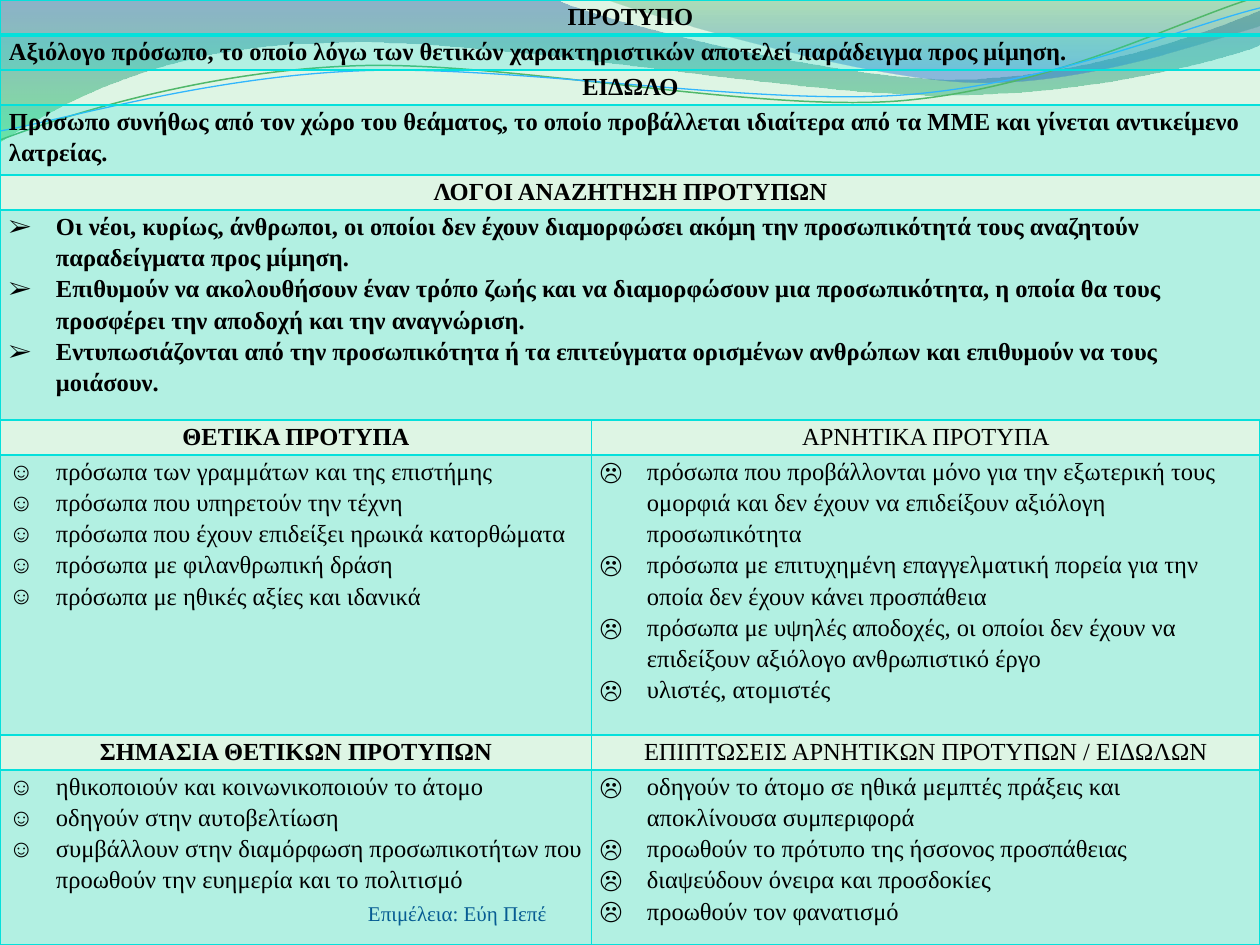
import pptx
import pptx.util
import pptx.dml.color
import pptx.enum.text
import pptx.oxml
import pptx.oxml.ns
from lxml import etree

PX = 914400 / 126
WIDE, HIGH = 1260, 945
FACE, AQUA = "Times New Roman", "05E0DB"
ARROW, SMILE, FROWN = "➢", "☺", "☹"
PLAIN = "{2D5ABB26-0587-4C30-8999-92F81FD0307C}"
COLS = [591, 669]

# Each row: height, filled, cells; each cell: bold, bullet, paragraphs.
ROWS = [
    (35, False, [(True, None, ["ΠΡΟΤΥΠΟ"])]),
    (35, True, [(True, None, [
        "Αξιόλογο πρόσωπο, το οποίο λόγω των θετικών χαρακτηριστικών αποτελεί παράδειγμα προς μίμηση."])]),
    (35, False, [(True, None, ["ΕΙΔΩΛΟ"])]),
    (70, True, [(True, None, [
        "Πρόσωπο συνήθως από τον χώρο του θεάματος, το οποίο προβάλλεται ιδιαίτερα από τα ΜΜΕ και γίνεται αντικείμενο λατρείας."])]),
    (35, False, [(True, None, ["ΛΟΓΟΙ ΑΝΑΖΗΤΗΣΗ ΠΡΟΤΥΠΩΝ"])]),
    (210, True, [(True, ARROW, [
        "Οι νέοι, κυρίως, άνθρωποι, οι οποίοι δεν έχουν διαμορφώσει ακόμη την προσωπικότητά τους αναζητούν παραδείγματα προς μίμηση.",
        "Επιθυμούν να ακολουθήσουν έναν τρόπο ζωής και να διαμορφώσουν μια προσωπικότητα, η οποία θα τους προσφέρει την αποδοχή και την αναγνώριση.",
        "Εντυπωσιάζονται από την προσωπικότητα ή τα επιτεύγματα ορισμένων ανθρώπων και επιθυμούν να τους μοιάσουν."])]),
    (35, False, [(True, None, ["ΘΕΤΙΚΑ ΠΡΟΤΥΠΑ"]), (False, None, ["ΑΡΝΗΤΙΚΑ ΠΡΟΤΥΠΑ"])]),
    (280, True, [
        (False, SMILE, [
            "πρόσωπα των γραμμάτων και της επιστήμης",
            "πρόσωπα που υπηρετούν την τέχνη",
            "πρόσωπα που έχουν επιδείξει ηρωικά κατορθώματα",
            "πρόσωπα με φιλανθρωπική δράση",
            "πρόσωπα με ηθικές αξίες και ιδανικά"]),
        (False, FROWN, [
            "πρόσωπα που προβάλλονται μόνο για την εξωτερική τους ομορφιά και δεν έχουν να επιδείξουν αξιόλογη προσωπικότητα",
            "πρόσωπα με επιτυχημένη επαγγελματική πορεία για την οποία δεν έχουν κάνει προσπάθεια",
            "πρόσωπα με υψηλές αποδοχές, οι οποίοι δεν έχουν να επιδείξουν αξιόλογο ανθρωπιστικό έργο",
            "υλιστές, ατομιστές"])]),
    (35, False, [(True, None, ["ΣΗΜΑΣΙΑ ΘΕΤΙΚΩΝ ΠΡΟΤΥΠΩΝ"]),
                 (False, None, ["ΕΠΙΠΤΩΣΕΙΣ ΑΡΝΗΤΙΚΩΝ ΠΡΟΤΥΠΩΝ / ΕΙΔΩΛΩΝ"])]),
    (175, True, [
        (False, SMILE, [
            "ηθικοποιούν και κοινωνικοποιούν το άτομο",
            "οδηγούν στην αυτοβελτίωση",
            "συμβάλλουν στην διαμόρφωση προσωπικοτήτων που προωθούν την ευημερία και το πολιτισμό"]),
        (False, FROWN, [
            "οδηγούν το άτομο σε ηθικά μεμπτές πράξεις και αποκλίνουσα συμπεριφορά",
            "προωθούν το πρότυπο της ήσσονος προσπάθειας",
            "διαψεύδουν όνειρα και προσδοκίες",
            "προωθούν τον φανατισμό"])]),
]

# Paths: two numbers make a line, six a cubic curve.
WAVES = [
    ([(0, "2960A7", 45), (100, "35DA5E", 55)],
     [(0, 0), (554, -1), (600, 21, 837, 79, 955, 79), (1075, 79, 1207, 33, 1260, 11),
      (1261, 45), (1239, 55, 1096, 96, 940, 95), (784, 95, 481, 35, 324, 43),
      (163, 45, 58, 105, -1, 142)]),
    ([(0, "36A752", 30), (80, "2472D3", 45)],
     [(604, -1), (641, 14, 859, 78, 969, 82), (1079, 87, 1211, 40, 1260, 26), (1260, 0)]),
]
LINES = [
    ("50B86A", 0.85, [(0, 140), (60, 117, 199, 72, 349, 66), (498, 59, 747, 112, 898, 101),
                      (1050, 89, 1182, 19, 1257, -3)]),
    ("31B6FD", 0.75, [(0, 131), (59, 121, 207, 77, 357, 71), (508, 64, 752, 106, 903, 95),
                      (1053, 84, 1186, 26, 1260, 8)]),
]


def px(num):
    return pptx.util.Emu(round(num * PX))


def tint(code):
    return pptx.dml.color.RGBColor.from_string(code)


def style(obj, **vals):
    for key, val in vals.items():
        setattr(obj, key, val)


def fade(node, part):
    """Give a colour element an opacity in percent."""
    etree.SubElement(node, pptx.oxml.ns.qn("a:alpha"), val=str(part * 1000))


def outline(slide, path, close):
    """Draw all points as lines, then join each curve's three points into one cubic."""
    dots = [seg[i:i + 2] for seg in path for i in range(0, len(seg), 2)]
    pen = slide.shapes.build_freeform(*dots[0], scale=PX)
    pen.add_line_segments(dots[1:], close=close)
    shape = pen.convert_to_shape()
    shape.shadow.inherit = False
    steps = iter(list(shape._element.iter(pptx.oxml.ns.qn("a:lnTo"))))
    for seg in path[1:]:
        first = next(steps)
        if len(seg) == 6:
            curve = etree.Element(pptx.oxml.ns.qn("a:cubicBezTo"))
            first.addprevious(curve)
            for step in (first, next(steps), next(steps)):
                curve.append(step[0])
                step.getparent().remove(step)
    return shape


def add_wave(slide, stops, path):
    shape = outline(slide, path, True)
    shape.line.fill.background()
    shape.fill.gradient()
    shape.fill.gradient_angle = 270
    for stop, (pos, code, _) in zip(shape.fill.gradient_stops, stops):
        stop.position = pos / 100
        stop.color.rgb = tint(code)
    grad = shape._element.spPr.find(pptx.oxml.ns.qn("a:gradFill"))
    for node, (_, _, part) in zip(grad.iter(pptx.oxml.ns.qn("a:srgbClr")), stops):
        fade(node, part)


def add_line(slide, code, width, path):
    shape = outline(slide, path, False)
    shape.fill.background()
    shape.line.color.rgb = tint(code)
    shape.line.width = pptx.util.Pt(width)


def write(para, text, size, code, bold=False):
    run = para.add_run()
    run.text = text
    style(run.font, name=FACE, size=pptx.util.Pt(size), bold=bold)
    run.font.color.rgb = tint(code)


def bullet(para, char):
    props = para._p.get_or_add_pPr()
    props.set("marL", str(px(47)))
    props.set("indent", str(-px(47)))
    etree.SubElement(props, pptx.oxml.ns.qn("a:buFont"), typeface=FACE)
    etree.SubElement(props, pptx.oxml.ns.qn("a:buChar"), char=char)


def border(cell, widths):
    props = cell._tc.get_or_add_tcPr()
    for spot, (side, width) in enumerate(widths.items()):
        props.insert(spot, pptx.oxml.parse_xml(
            f'<a:ln{side} {pptx.oxml.ns.nsdecls("a")} w="{pptx.util.Pt(width)}"><a:solidFill>'
            f'<a:srgbClr val="{AQUA}"/></a:solidFill></a:ln{side}>'))


def fill_cell(cell, filled, bold, char, texts):
    style(cell, margin_left=px(9), margin_right=px(8), margin_top=0, margin_bottom=0)
    frame = cell.text_frame
    for num, text in enumerate(texts):
        para = frame.add_paragraph() if num else frame.paragraphs[0]
        para.line_spacing = 1.15
        if not filled:
            para.alignment = pptx.enum.text.PP_ALIGN.CENTER
        if char:
            bullet(para, char)
        write(para, text, 14, "000000", bold)


def add_grid(slide):
    table = slide.shapes.add_table(len(ROWS), len(COLS), 0, 0, px(WIDE), px(HIGH)).table
    style(table, first_row=False, horz_banding=False)
    table._tbl.tblPr.find(pptx.oxml.ns.qn("a:tableStyleId")).text = PLAIN
    for col, width in zip(table.columns, COLS):
        col.width = px(width)
    for num, (height, filled, cells) in enumerate(ROWS):
        table.rows[num].height = px(height)
        row = [table.cell(num, i) for i in range(len(COLS))]
        if len(cells) == 1:
            row[0].merge(row[1])
        for cell, data in zip(row, cells):
            fill_cell(cell, filled, *data)
        for spot, cell in enumerate(row):
            if filled:
                cell.fill.solid()
                cell.fill.fore_color.rgb = tint(AQUA)
                fade(next(cell._tc.tcPr.iter(pptx.oxml.ns.qn("a:srgbClr"))), 20)
            else:
                cell.fill.background()
            border(cell, {"L": 0.5 if spot else 1, "R": 1 if spot else 0.5,
                          "T": 2 if num == 1 else 1, "B": 2 if num == 0 else 1})


def add_credit(slide):
    frame = slide.shapes.add_textbox(px(368), px(876), px(462), px(50)).text_frame
    style(frame, word_wrap=True, vertical_anchor=pptx.enum.text.MSO_ANCHOR.BOTTOM,
          margin_left=0, margin_right=0, margin_top=0, margin_bottom=0)
    write(frame.paragraphs[0], "Επιμέλεια: Εύη Πεπέ", 12, "073B81")


def main():
    deck = pptx.Presentation()
    style(deck, slide_width=px(WIDE), slide_height=px(HIGH))
    slide = deck.slides.add_slide(deck.slide_layouts[6])
    slide.background.fill.solid()
    slide.background.fill.fore_color.rgb = tint("DEF5E4")
    for wave in WAVES:
        add_wave(slide, *wave)
    for line in LINES:
        add_line(slide, *line)
    add_credit(slide)
    add_grid(slide)
    deck.save("out.pptx")


if __name__ == "__main__":
    main()
